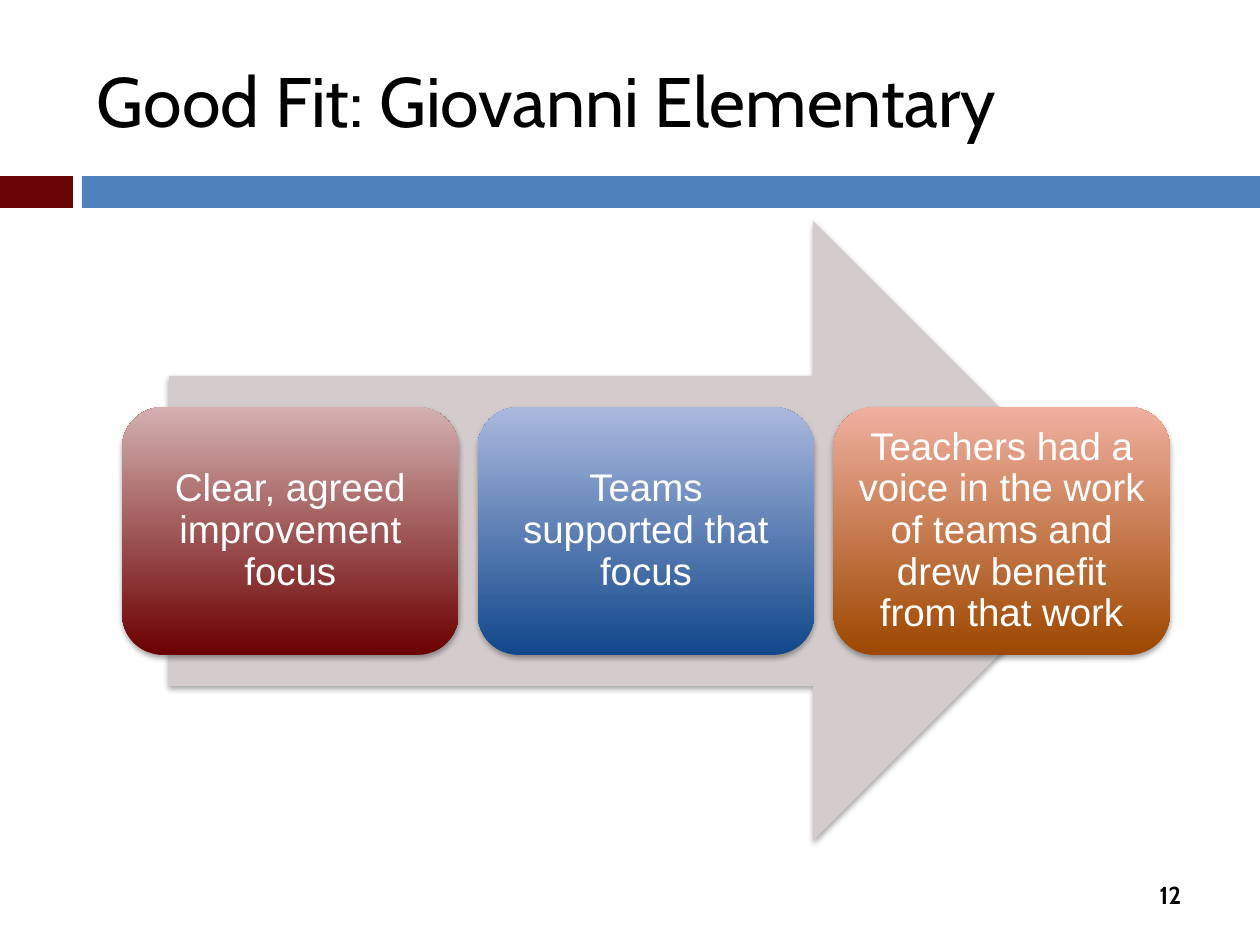
from dataclasses import dataclass

from lxml import etree
from pptx import Presentation
from pptx import util as u
from pptx.dml.color import RGBColor
from pptx.enum import shapes, text
from pptx.oxml.ns import qn

PX = 914400 / 126  # EMU in one px


@dataclass(frozen=True)
class Theme:
    title_font: str = "Cabin"
    body_font: str = "Arial"
    title_size: int = 40
    body_size: int = 22
    number_size: int = 14
    ink: str = "000000"
    light: str = "FFFFFF"
    accent: str = "690202"
    band: str = "4F81BD"
    arrow: str = "D4CCCC"
    # bottom and top colour of each card
    cards: tuple = (("6B0000", "D4B0B0"), ("11478B", "ABB9DE"), ("9D4700", "F0B0A0"))


T = Theme()
CARD_TEXTS = (
    "Clear, agreed improvement focus",
    "Teams supported that focus",
    "Teachers had a voice in the work of teams and drew benefit from that work",
)


def px(n):
    return u.Emu(round(n * PX))


def rgb(code):
    return RGBColor.from_string(code)


def add_block(s, kind, box, fill=None):
    sp = s.shapes.add_shape(kind, *map(px, box))
    sp.shadow.inherit = False
    sp.line.fill.background()
    if fill:
        sp.fill.solid()
        sp.fill.fore_color.rgb = rgb(fill)
    return sp


def add_shadow(sp):
    effects = sp._element.spPr.find(qn("a:effectLst"))
    shadow = etree.SubElement(effects, qn("a:outerShdw"), blurRad="40000",
                              dist="23000", dir="5400000", rotWithShape="0")
    color = etree.SubElement(shadow, qn("a:srgbClr"), val=T.ink)
    etree.SubElement(color, qn("a:alpha"), val="35000")


def set_text(sp, words, font, size, color, align, inset, bold=False):
    tf = sp.text_frame
    tf.word_wrap = True
    tf.auto_size = text.MSO_AUTO_SIZE.NONE
    tf.vertical_anchor = text.MSO_ANCHOR.MIDDLE
    tf.margin_left = tf.margin_right = px(inset[0])
    tf.margin_top = tf.margin_bottom = px(inset[1])
    p = tf.paragraphs[0]
    p.alignment = align
    r = p.add_run()
    r.text = words
    r.font.name, r.font.size, r.font.bold = font, u.Pt(size), bold
    r.font.color.rgb = rgb(color)
    return p


def add_header_band(s, box):
    x, y, w, h = box
    tab, gap = 73, 9
    add_block(s, shapes.MSO_SHAPE.RECTANGLE, (x, y, tab, h), T.accent)
    add_block(s, shapes.MSO_SHAPE.RECTANGLE,
              (x + tab + gap, y, w - tab - gap, h), T.band)


def add_title(s, box):
    sp = s.shapes.title
    sp.left, sp.top, sp.width, sp.height = map(px, box)
    set_text(sp, "Good Fit: Giovanni Elementary", T.title_font, T.title_size,
             T.ink, text.PP_ALIGN.LEFT, (13, 13))


def add_page_number(s, box):
    sp = s.shapes.add_textbox(*map(px, box))
    set_text(sp, "12", T.title_font, T.number_size, T.ink,
             text.PP_ALIGN.CENTER, (13, 6), bold=True)


def add_card(s, box, words, colors):
    sp = add_block(s, shapes.MSO_SHAPE.ROUNDED_RECTANGLE, box)
    sp.fill.gradient()
    sp.fill.gradient_angle = 90
    for stop, color in zip(sp.fill.gradient_stops, colors):
        stop.color.rgb = rgb(color)
    add_shadow(sp)
    p = set_text(sp, words, T.body_font, T.body_size, T.light,
                 text.PP_ALIGN.CENTER, (11, 11))
    p.line_spacing = 0.9


def add_process(s, box):
    x, y, w, h = box
    # Arrow behind the cards
    inset = 47
    add_shadow(add_block(s, shapes.MSO_SHAPE.RIGHT_ARROW,
                         (x + inset, y, w - 2 * inset, h), T.arrow))
    # Equal cards, centred on the arrow
    gap, card_h = 19, 248
    card_w = (w - gap * (len(CARD_TEXTS) - 1)) / len(CARD_TEXTS)
    for i, (words, colors) in enumerate(zip(CARD_TEXTS, T.cards)):
        add_card(s, (x + i * (card_w + gap), y + (h - card_h) / 2, card_w, card_h),
                 words, colors)


def main():
    prs = Presentation()
    prs.slide_width, prs.slide_height = px(1260), px(945)
    s = prs.slides.add_slide(prs.slide_layouts[5])
    add_header_band(s, (0, 176, 1260, 32))
    add_page_number(s, (1134, 878, 73, 34))
    add_title(s, (84, 32, 1124, 136))
    add_process(s, (122, 221, 1048, 620))
    prs.save("out.pptx")


if __name__ == "__main__":
    main()
